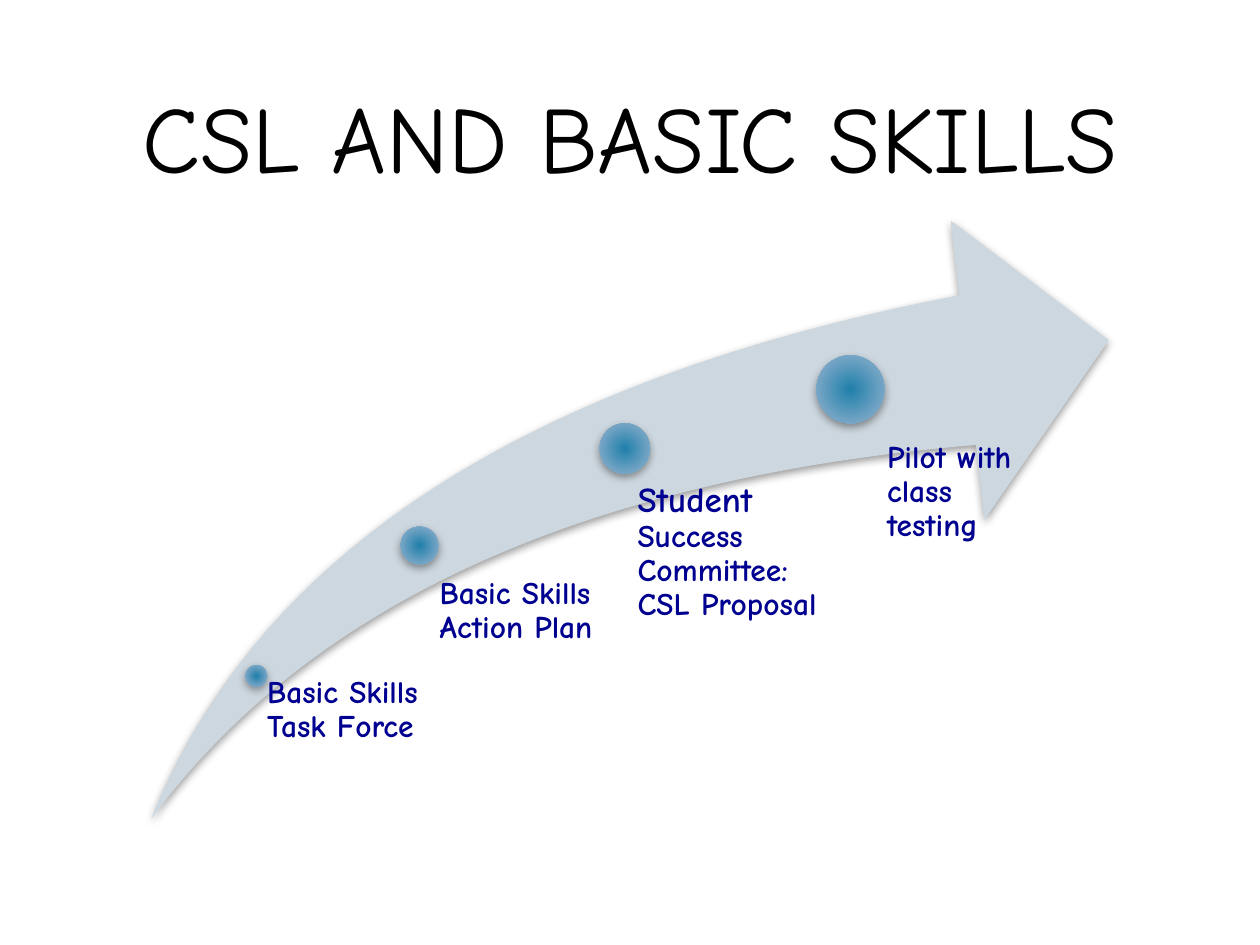
from dataclasses import dataclass

from lxml import etree
from pptx import Presentation
from pptx.dml.color import RGBColor
from pptx.enum.shapes import MSO_SHAPE
from pptx.enum.text import MSO_ANCHOR, MSO_AUTO_SIZE, PP_ALIGN
from pptx.oxml import parse_xml
from pptx.oxml.ns import qn
from pptx.util import Inches, Pt

ELLIPSE = MSO_SHAPE.OVAL
SWOOSH = MSO_SHAPE.SWOOSH_ARROW
TOP, BOTTOM = MSO_ANCHOR.TOP, MSO_ANCHOR.BOTTOM
CENTER = PP_ALIGN.CENTER
NO_FIT = MSO_AUTO_SIZE.NONE
NS = "http://schemas.openxmlformats.org/drawingml/2006/main"


@dataclass(frozen=True)
class Theme:
    font: str = "Comic Neue"
    title: str = "000000"
    label: str = "000090"
    arrow: str = "CDD7DF"
    shadow: str = "000000"
    dot_stops: tuple = ((0, "2080AB"), (69, "75A5C5"), (100, "B8CCDC"))
    title_size: int = 54
    lead_size: int = 20
    label_size: int = 18


@dataclass(frozen=True)
class Box:
    left: float
    top: float
    width: float
    height: float

    def inches(self) -> tuple:
        return tuple(map(Inches, (self.left, self.top, self.width, self.height)))


@dataclass(frozen=True)
class Milestone:
    dot_left: float
    dot_top: float
    dot_size: float
    label: Box
    inset: float
    text: str
    lead: str = ""


THEME = Theme()
MILESTONES = (
    Milestone(1.95, 5.28, 0.17, Box(2.03, 5.37, 1.3, 1.13), 0.09,
              "Basic Skills Task Force"),
    Milestone(3.18, 4.18, 0.3, Box(3.33, 4.58, 1.6, 1.66), 0.16,
              "Basic Skills Action Plan"),
    Milestone(4.76, 3.36, 0.4, Box(4.85, 3.83, 1.82, 2.4), 0.21,
              "Success Committee: CSL Proposal", "Student "),
    Milestone(6.48, 2.82, 0.54, Box(6.75, 3.5, 1.6, 2.59), 0.29,
              "Pilot with class testing"),
)


def set_font(font, size: int, color: str, bold: bool) -> None:
    font.name = THEME.font
    font.size = Pt(size)
    font.bold = bold
    font.color.rgb = RGBColor.from_string(color)


def add_shadowed(slide, kind, box: Box):
    sp = slide.shapes.add_shape(kind, *box.inches())
    sp.line.fill.background()
    sp.shadow.inherit = False
    effects = sp._element.spPr.find(qn("a:effectLst"))
    shadow = etree.SubElement(effects, qn("a:outerShdw"), blurRad=str(Pt(5)),
                              dist=str(Pt(2)), dir="5400000", rotWithShape="0")
    color = etree.SubElement(shadow, qn("a:srgbClr"), val=THEME.shadow)
    etree.SubElement(color, qn("a:alpha"), val="40000")
    return sp


def fill_radial(sp) -> None:
    stops = "".join(f'<a:gs pos="{pos * 1000}"><a:srgbClr val="{color}"/></a:gs>'
                    for pos, color in THEME.dot_stops)
    grad = parse_xml(
        f'<a:gradFill xmlns:a="{NS}" rotWithShape="1"><a:gsLst>{stops}</a:gsLst>'
        '<a:path path="circle"><a:fillToRect l="100000" t="100000" '
        'r="100000" b="100000"/></a:path></a:gradFill>')
    sp._element.spPr.find(qn("a:prstGeom")).addnext(grad)


def add_title(slide, text: str, box: Box) -> None:
    title = slide.shapes.title
    title.left, title.top, title.width, title.height = box.inches()
    tf = title.text_frame
    tf.text = text
    tf.auto_size = NO_FIT
    tf.vertical_anchor = BOTTOM
    p = tf.paragraphs[0]
    p.alignment = CENTER
    set_font(p.font, THEME.title_size, THEME.title, False)


def add_arrow(slide, box: Box) -> None:
    sp = add_shadowed(slide, SWOOSH, box)
    sp.adjustments[0] = sp.adjustments[1] = 0.25
    sp.fill.solid()
    sp.fill.fore_color.rgb = RGBColor.from_string(THEME.arrow)


def add_milestone(slide, item: Milestone) -> None:
    dot = Box(item.dot_left, item.dot_top, item.dot_size, item.dot_size)
    fill_radial(add_shadowed(slide, ELLIPSE, dot))

    tf = slide.shapes.add_textbox(*item.label.inches()).text_frame
    tf.word_wrap = True
    tf.vertical_anchor = TOP
    tf.margin_left = Inches(item.inset)
    tf.margin_top = tf.margin_right = tf.margin_bottom = 0
    p = tf.paragraphs[0]
    p.line_spacing = 0.9
    set_font(p.font, THEME.label_size, THEME.label, True)
    runs = ((item.lead, THEME.lead_size), (item.text, THEME.label_size))
    for text, size in runs:
        if text:
            r = p.add_run()
            r.text = text
            set_font(r.font, size, THEME.label, True)


def main() -> None:
    prs = Presentation()
    prs.slide_width, prs.slide_height = Inches(10), Inches(7.5)
    slide = prs.slides.add_slide(prs.slide_layouts[5])
    add_title(slide, "CSL AND BASIC SKILLS", Box(0.6, 0.12, 8.8, 1.46))
    add_arrow(slide, Box(1.2, 1.75, 7.6, 4.75))
    for item in MILESTONES:
        add_milestone(slide, item)
    prs.save("out.pptx")


if __name__ == "__main__":
    main()
